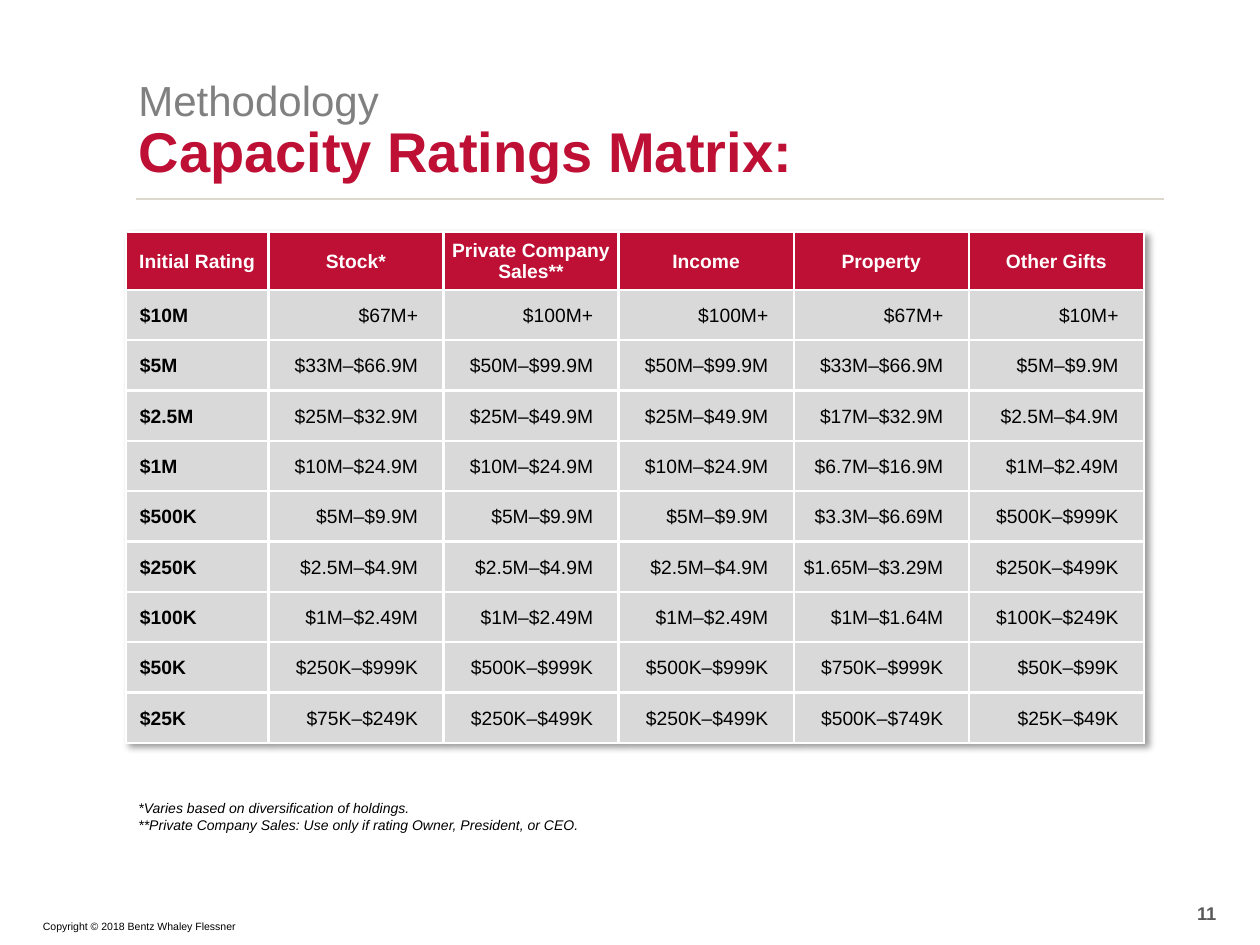
import dataclasses

import lxml.etree
import pptx
import pptx.dml.color
import pptx.enum.shapes
import pptx.enum.text
import pptx.oxml
import pptx.oxml.ns
import pptx.util

Cm = pptx.util.Cm
Pt = pptx.util.Pt
Align = pptx.enum.text.PP_ALIGN
Anchor = pptx.enum.text.MSO_ANCHOR
qn = pptx.oxml.ns.qn


@dataclasses.dataclass(frozen=True)
class Theme:
    font: str = "Arial"
    red: str = "BE0F34"
    gray: str = "808080"
    dark: str = "595959"
    pale: str = "D9D9D9"
    rule: str = "DCD8CD"
    black: str = "000000"
    white: str = "FFFFFF"
    title: float = 32
    kicker: float = 24
    cell: float = 11
    page: float = 10.5
    note: float = 8
    legal: float = 6


theme = Theme()
rgb = pptx.dml.color.RGBColor.from_string


def write(frame, text, size, color=theme.black, bold=False, italic=False,
          align=Align.LEFT, anchor=Anchor.TOP):
    """Fill a text frame, one paragraph for each line of text."""
    frame.word_wrap = True
    frame.vertical_anchor = anchor
    frame.text = text
    for para in frame.paragraphs:
        para.alignment = align
        para.font.name = theme.font
        para.font.size = Pt(size)
        para.font.bold = bold
        para.font.italic = italic
        para.font.color.rgb = rgb(color)


def edge(cell, color, width):
    """Draw all four borders of a cell."""
    props = cell._tc.get_or_add_tcPr()
    for spot, side in enumerate(("lnL", "lnR", "lnT", "lnB")):
        line = lxml.etree.Element(qn(f"a:{side}"), w=str(Pt(width)))
        fill = lxml.etree.SubElement(line, qn("a:solidFill"))
        lxml.etree.SubElement(fill, qn("a:srgbClr"), val=color)
        props.insert(spot, line)


deck = pptx.Presentation()
deck.slide_width, deck.slide_height = Cm(25.4), Cm(19.05)
slide = deck.slides.add_slide(deck.slide_layouts[5])
shapes = slide.shapes

# Heading
title = shapes.title
title.left, title.top, title.width, title.height = (
    Cm(2.54), Cm(2.11), Cm(20.93), Cm(1.9))
kicker = shapes.add_textbox(Cm(2.54), Cm(1.27), Cm(20.93), Cm(1.07))
for box in (title, kicker):
    box.text_frame.auto_size = pptx.enum.text.MSO_AUTO_SIZE.NONE
    box.text_frame.margin_top = Cm(0.23)
write(title.text_frame, "Capacity Ratings Matrix:", theme.title,
      color=theme.red, bold=True)
write(kicker.text_frame, "Methodology", theme.kicker, color=theme.gray)

rule = shapes.add_connector(pptx.enum.shapes.MSO_CONNECTOR.STRAIGHT,
                            Cm(2.74), Cm(4.01), Cm(23.47), Cm(4.01))
rule.line.color.rgb = rgb(theme.rule)
rule.line.width = Pt(0.75)
lxml.etree.SubElement(rule._element.spPr, qn("a:effectLst"))

# Ratings table
rows = [
    ("Initial Rating", "Stock*", "Private Company Sales**", "Income",
     "Property", "Other Gifts"),
    ("$10M", "$67M+", "$100M+", "$100M+", "$67M+", "$10M+"),
    ("$5M", "$33M–$66.9M", "$50M–$99.9M", "$50M–$99.9M", "$33M–$66.9M",
     "$5M–$9.9M"),
    ("$2.5M", "$25M–$32.9M", "$25M–$49.9M", "$25M–$49.9M", "$17M–$32.9M",
     "$2.5M–$4.9M"),
    ("$1M", "$10M–$24.9M", "$10M–$24.9M", "$10M–$24.9M", "$6.7M–$16.9M",
     "$1M–$2.49M"),
    ("$500K", "$5M–$9.9M", "$5M–$9.9M", "$5M–$9.9M", "$3.3M–$6.69M",
     "$500K–$999K"),
    ("$250K", "$2.5M–$4.9M", "$2.5M–$4.9M", "$2.5M–$4.9M", "$1.65M–$3.29M",
     "$250K–$499K"),
    ("$100K", "$1M–$2.49M", "$1M–$2.49M", "$1M–$2.49M", "$1M–$1.64M",
     "$100K–$249K"),
    ("$50K", "$250K–$999K", "$500K–$999K", "$500K–$999K", "$750K–$999K",
     "$50K–$99K"),
    ("$25K", "$75K–$249K", "$250K–$499K", "$250K–$499K", "$500K–$749K",
     "$25K–$49K"),
]
wide, high = 20.52, 10.31
first, head = 2.87, 1.17
table = shapes.add_table(len(rows), len(rows[0]), Cm(2.54), Cm(4.67),
                         Cm(wide), Cm(high)).table
table.horz_banding = False
for i, col in enumerate(table.columns):
    col.width = Cm((wide - first) / (len(rows[0]) - 1) if i else first)
for i, row in enumerate(table.rows):
    row.height = Cm((high - head) / (len(rows) - 1) if i else head)

for r, row in enumerate(rows):
    for c, text in enumerate(row):
        cell = table.cell(r, c)
        top, label = r == 0, c == 0
        cell.margin_left = Cm(0.28 if label and not top else 0.03)
        cell.margin_right = Cm(0.03 if label or top else 0.51)
        cell.margin_top, cell.margin_bottom = Cm(0.03), 0
        cell.fill.solid()
        cell.fill.fore_color.rgb = rgb(theme.red if top else theme.pale)
        align = Align.CENTER if top else Align.LEFT if label else Align.RIGHT
        write(cell.text_frame, text, theme.cell, bold=top or label,
              color=theme.white if top else theme.black, align=align)
        cell.vertical_anchor = Anchor.MIDDLE
        edge(cell, theme.white, 1.5)

glow = lxml.etree.Element(qn("a:effectLst"))
cast = lxml.etree.SubElement(glow, qn("a:outerShdw"), blurRad=str(Pt(4)),
                             dist=str(Pt(3)), dir="2700000", algn="tl",
                             rotWithShape="0")
tint = lxml.etree.SubElement(cast, qn("a:srgbClr"), val=theme.black)
lxml.etree.SubElement(tint, qn("a:alpha"), val="40000")
table._tbl.tblPr.insert(0, glow)

# Notes and footer
notes = shapes.add_textbox(Cm(2.54), Cm(16), Cm(19.43), Cm(0.94))
write(notes.text_frame,
      "*Varies based on diversification of holdings.\n"
      "**Private Company Sales: Use only if rating Owner, President, or CEO.",
      theme.note, italic=True)
legal = shapes.add_textbox(Cm(0.4), Cm(18.42), Cm(4.6), Cm(0.5))
write(legal.text_frame, "Copyright © 2018 Bentz Whaley Flessner",
      theme.legal, align=Align.RIGHT)
page = shapes.add_textbox(Cm(20.12), Cm(17.98), Cm(4.65), Cm(0.84))
write(page.text_frame, "11", theme.page, color=theme.dark, bold=True,
      align=Align.RIGHT, anchor=Anchor.MIDDLE)

deck.save("out.pptx")
